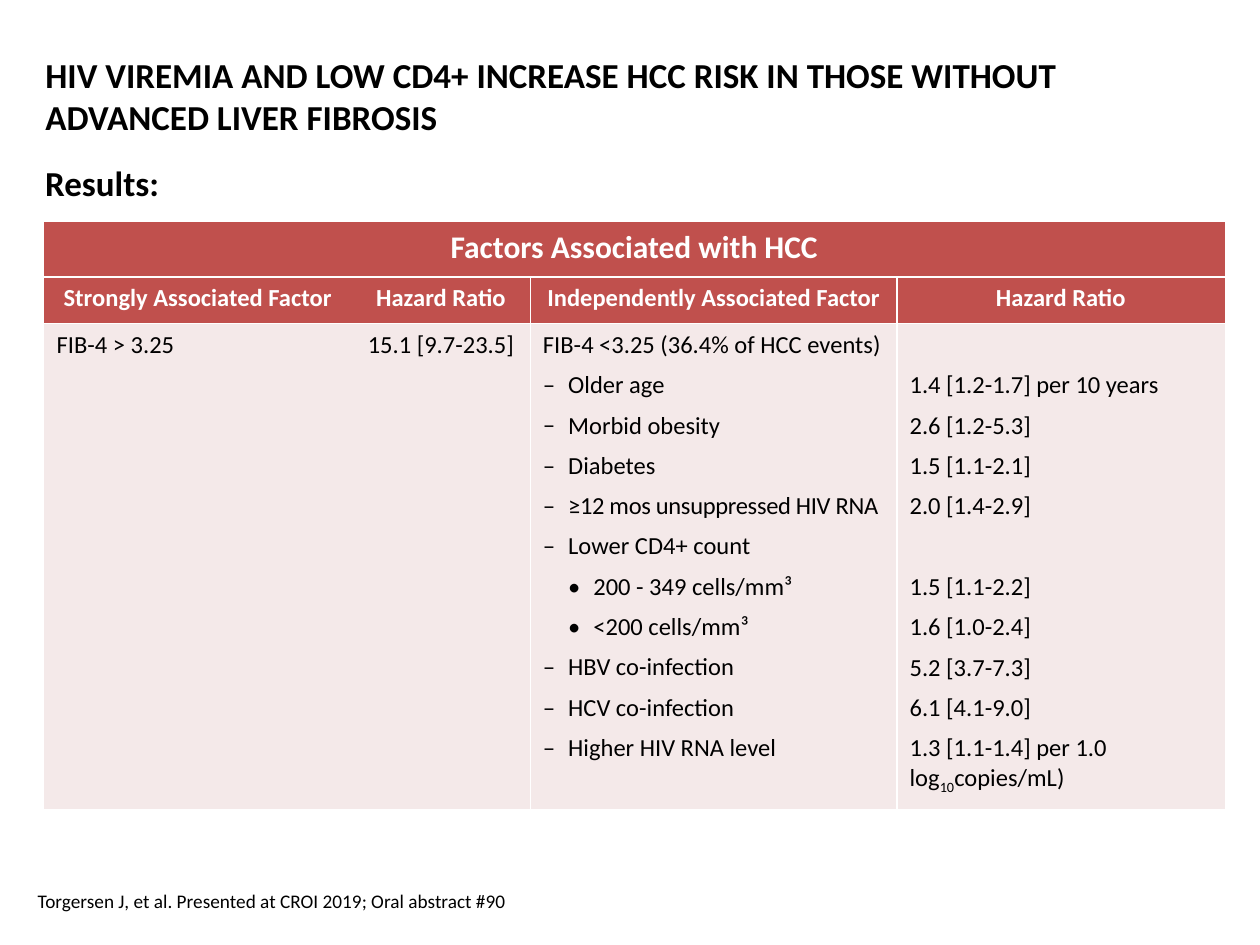
from dataclasses import dataclass

from lxml.etree import SubElement
from pptx import Presentation
from pptx.dml.color import RGBColor
from pptx.enum.text import MSO_ANCHOR, PP_ALIGN
from pptx.oxml import parse_xml
from pptx.oxml.ns import nsdecls, qn
from pptx.util import Inches, Pt


@dataclass(frozen=True)
class Theme:
    font: str = "Calibri"
    black: str = "000000"
    white: str = "FFFFFF"
    header: str = "C0504D"
    body: str = "F4E9E9"
    title_size: int = 20
    band_size: int = 18
    cell_size: int = 14
    source_size: int = 11
    after: int = 6
    line: float = 17.1  # height of one line of cell text, in points


T = Theme()
NO_STYLE = "{2D5ABB26-0587-4C30-8999-92F81FD0307C}"

TITLE = "HIV VIREMIA AND LOW CD4+ INCREASE HCC RISK IN THOSE WITHOUT ADVANCED LIVER FIBROSIS"
RESULTS = "Results:"
SOURCE = "Torgersen J, et al. Presented at CROI 2019; Oral abstract #90"
BAND = "Factors Associated with HCC"
HEADERS = ["Strongly Associated Factor", "Hazard Ratio",
           "Independently Associated Factor", "Hazard Ratio"]
STRONG = ("FIB-4 > 3.25", "15.1 [9.7-23.5]")
# (level, factor, hazard ratio as text and subscript pieces)
FACTORS = [
    (0, "FIB-4 <3.25 (36.4% of HCC events)", None),
    (1, "Older age", ["1.4 [1.2-1.7] per 10 years"]),
    (1, "Morbid obesity", ["2.6 [1.2-5.3]"]),
    (1, "Diabetes", ["1.5 [1.1-2.1]"]),
    (1, "≥12 mos unsuppressed HIV RNA", ["2.0 [1.4-2.9]"]),
    (1, "Lower CD4+ count", None),
    (2, "200 - 349 cells/mm³", ["1.5 [1.1-2.2]"]),
    (2, "<200 cells/mm³", ["1.6 [1.0-2.4]"]),
    (1, "HBV co-infection", ["5.2 [3.7-7.3]"]),
    (1, "HCV co-infection", ["6.1 [4.1-9.0]"]),
    (1, "Higher HIV RNA level", ["1.3 [1.1-1.4] per 1.0 log", "10", "copies/mL)"]),
]
TIGHT = "≥12 mos unsuppressed HIV RNA"
BULLETS = {1: "‒", 2: "•"}
INDENT = 0.2
COLS = [2.44, 1.42, 2.91, 2.6]
ROWS = [0.44, 0.37, 3.86]


def add_run(p, text, size, color=T.black, bold=False):
    r = p.add_run()
    r.text = text
    for name, value in dict(name=T.font, size=Pt(size), bold=bold).items():
        setattr(r.font, name, value)
    r.font.color.rgb = RGBColor.from_string(color)
    return r


def fill_frame(sp, box, text, size, bold, anchor):
    """Place a text shape and give it one left-aligned paragraph."""
    sp.left, sp.top, sp.width, sp.height = map(Inches, box)
    tf = sp.text_frame
    tf.word_wrap, tf.vertical_anchor = True, anchor
    p = tf.paragraphs[0]
    p.alignment, p.line_spacing = PP_ALIGN.LEFT, 1.0
    add_run(p, text, size, bold=bold)


def next_paragraph(tf):
    p = tf.paragraphs[0]
    p = tf.add_paragraph() if p.runs else p
    p.space_after = Pt(T.after)
    return p


def set_bullet(p, level):
    pPr = p._p.get_or_add_pPr()
    pPr.set("marL", str(Inches(INDENT * level)))
    pPr.set("indent", str(-Inches(INDENT)))
    SubElement(pPr, qn("a:buFont")).set("typeface", T.font)
    SubElement(pPr, qn("a:buChar")).set("char", BULLETS[level])


def set_borders(cell, sides):
    """Draw white 1 pt lines on the given sides, in L, R, T, B order."""
    tcPr = cell._tc.get_or_add_tcPr()
    for i, side in enumerate(sides):
        tcPr.insert(i, parse_xml(
            f'<a:ln{side} {nsdecls("a")} w="{Pt(1)}"><a:solidFill>'
            f'<a:srgbClr val="{T.white}"/></a:solidFill></a:ln{side}>'))


def add_header(cell, text, size):
    p = cell.text_frame.paragraphs[0]
    p.alignment = PP_ALIGN.CENTER
    add_run(p, text, size, T.white, True)


def add_factors(cell):
    for level, factor, _ in FACTORS:
        p = next_paragraph(cell.text_frame)
        if level:
            set_bullet(p, level)
        r = add_run(p, factor, T.cell_size)
        if factor == TIGHT:
            r._r.get_or_add_rPr().set("spc", "-20")


def add_ratios(cell):
    """List the ratios level with their factors, leaving room where none is given."""
    pitch, gap = T.line + T.after, 0
    for _, _, ratio in FACTORS:
        if ratio is None:
            gap += pitch
            continue
        p = next_paragraph(cell.text_frame)
        if gap and len(cell.text_frame.paragraphs) == 1:
            cell.margin_top = Inches(0.05) + Pt(gap)
        elif gap:
            p.space_before = Pt(gap)
        gap = 0
        for i, piece in enumerate(ratio):
            r = add_run(p, piece, T.cell_size)
            if i % 2:
                r._r.get_or_add_rPr().set("baseline", "-25000")


def add_hazard_table(s):
    box = map(Inches, (0.35, 1.76, sum(COLS), sum(ROWS)))
    table = s.shapes.add_table(len(ROWS), len(COLS), *box).table
    table._tbl.tblPr.find(qn("a:tableStyleId")).text = NO_STYLE
    for sizes, parts, name in ((COLS, table.columns, "width"), (ROWS, table.rows, "height")):
        for size, part in zip(sizes, parts):
            setattr(part, name, Inches(size))
    for row in range(len(ROWS)):
        for col in range(len(COLS)):
            cell = table.cell(row, col)
            cell.fill.solid()
            cell.fill.fore_color.rgb = RGBColor.from_string(T.body if row == 2 else T.header)
            divider = {1: "R", 2: "L"}.get(col, "") if row else ""
            set_borders(cell, divider + "TB")
    table.cell(0, 0).merge(table.cell(0, len(COLS) - 1))
    add_header(table.cell(0, 0), BAND, T.band_size)
    for col, text in enumerate(HEADERS):
        add_header(table.cell(1, col), text, T.cell_size)
    for col, text in enumerate(STRONG):
        p = next_paragraph(table.cell(2, col).text_frame)
        p.alignment = PP_ALIGN.CENTER if col else PP_ALIGN.LEFT
        add_run(p, text, T.cell_size)
    add_factors(table.cell(2, 2))
    add_ratios(table.cell(2, 3))


def main():
    prs = Presentation()
    prs.slide_width, prs.slide_height = Inches(10), Inches(7.5)
    s = prs.slides.add_slide(prs.slide_layouts[5])
    fill_frame(s.shapes.title, (0.26, 0.36, 9.53, 0.79), TITLE,
               T.title_size, True, MSO_ANCHOR.MIDDLE)
    for box, text, size, bold, anchor in (
            ((0.26, 1.23, 9.53, 5.51), RESULTS, T.title_size, True, MSO_ANCHOR.TOP),
            ((0.2, 6.95, 9.61, 0.4), SOURCE, T.source_size, False, MSO_ANCHOR.MIDDLE)):
        fill_frame(s.shapes.add_textbox(0, 0, 0, 0), box, text, size, bold, anchor)
    add_hazard_table(s)
    prs.save("out.pptx")


if __name__ == "__main__":
    main()
